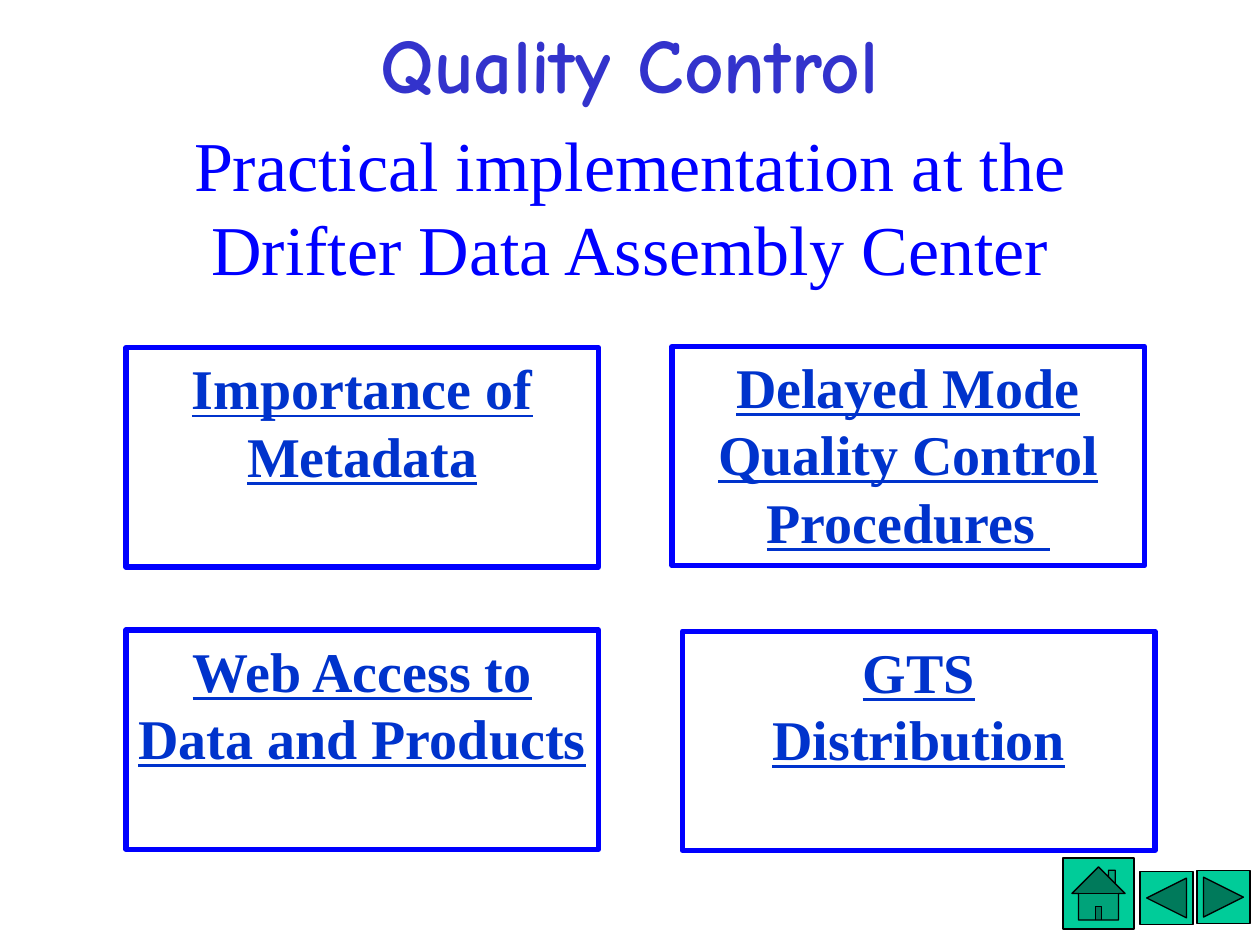
from pptx import Presentation
from pptx.dml.color import RGBColor
from pptx.enum.shapes import MSO_SHAPE
from pptx.enum.text import MSO_ANCHOR, PP_ALIGN
from pptx.util import Pt

HOME = MSO_SHAPE.ACTION_BUTTON_HOME
BACK = MSO_SHAPE.ACTION_BUTTON_BACK_OR_PREVIOUS
FORWARD = MSO_SHAPE.ACTION_BUTTON_FORWARD_OR_NEXT
RECTANGLE = MSO_SHAPE.RECTANGLE
TOP = MSO_ANCHOR.TOP
CENTER = PP_ALIGN.CENTER

COLORS = {
    "title": "3333CC",
    "blue": "0000FF",
    "topic": "0033CC",
    "button": "00CC99",
    "outline": "000000",
}
SERIF = "Times New Roman"
TOPIC_SIZE = (270, 125.3)
TOPICS = [
    (72, 198.7, ["Importance of Metadata"]),
    (384, 198, ["Delayed Mode Quality Control Procedures "]),
    (72, 360, ["Web Access to Data and Products"]),
    (390, 360.7, ["GTS", "Distribution"]),
]
BUTTONS = [
    (HOME, 607.5, 490.3, 40.5),
    (BACK, 651.5, 498, 30.3),
    (FORWARD, 684, 497.5, 30.3),
]


def color(name):
    return RGBColor.from_string(COLORS[name])


def write(shape, lines, size, ink, font=SERIF, bold=False, underline=False, inset=7.2):
    frame = shape.text_frame
    frame.word_wrap = True
    frame.vertical_anchor = TOP
    frame.margin_left = frame.margin_right = Pt(inset)
    for index, line in enumerate(lines):
        para = frame.add_paragraph() if index else frame.paragraphs[0]
        para.alignment = CENTER
        span = para.add_run()
        span.text = line
        span.font.name = font
        span.font.size = Pt(size)
        span.font.bold = bold
        span.font.underline = underline
        span.font.color.rgb = color(ink)


def add_outlined(page, kind, box, line, width, fill=None):
    shape = page.shapes.add_shape(kind, *map(Pt, box))
    shape.shadow.inherit = False
    if fill:
        shape.fill.solid()
        shape.fill.fore_color.rgb = color(fill)
    else:
        shape.fill.background()
    shape.line.color.rgb = color(line)
    shape.line.width = Pt(width)
    return shape


def add_heading(page, box, text, **style):
    write(page.shapes.add_textbox(*map(Pt, box)), [text], **style)


def add_topic(page, left, top, lines):
    box = add_outlined(page, RECTANGLE, (left, top, *TOPIC_SIZE), "blue", 3)
    write(box, lines, 32, "topic", bold=True, underline=True, inset=6)


def add_button(page, kind, left, top, side):
    add_outlined(page, kind, (left, top, side, side), "outline", 0.75, "button")


def main():
    deck = Presentation()
    deck.slide_width, deck.slide_height = Pt(720), Pt(540)
    page = deck.slides.add_slide(deck.slide_layouts[6])
    add_heading(page, (96, 6, 528, 60), "Quality Control",
                size=44, ink="title", font="Comic Neue", bold=True)
    add_heading(page, (72, 66, 576, 103),
                "Practical implementation at the Drifter Data Assembly Center",
                size=40, ink="blue")
    for topic in TOPICS:
        add_topic(page, *topic)
    for button in BUTTONS:
        add_button(page, *button)
    deck.save("out.pptx")


if __name__ == "__main__":
    main()
